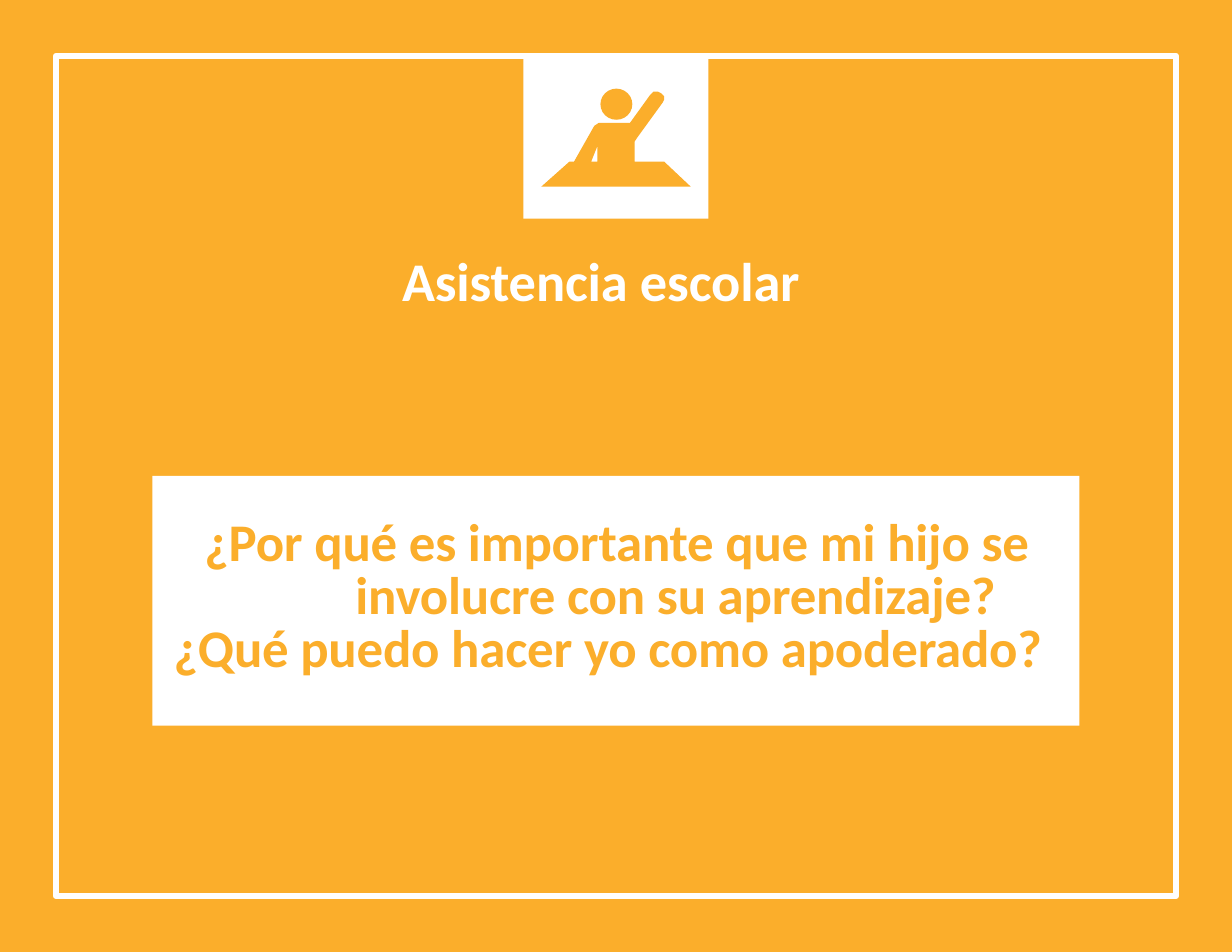
from dataclasses import dataclass
from typing import Optional

from pptx import Presentation
from pptx.dml.color import RGBColor
from pptx.enum.shapes import MSO_SHAPE
from pptx.enum.text import MSO_ANCHOR, MSO_AUTO_SIZE, PP_ALIGN
from pptx.util import Pt

COLORS = {"orange": "FBAE2B", "white": "FFFFFF"}


@dataclass
class Block:
    left: float
    top: float
    width: float
    height: float
    fill: Optional[str] = None
    line: Optional[str] = None
    kind: MSO_SHAPE = MSO_SHAPE.RECTANGLE


@dataclass
class Question:
    text: str
    align: PP_ALIGN
    margin: float
    indent: float = 0


PAGE = Block(0, 0, 792, 612, fill="orange")
FRAME = Block(36, 36, 720, 540, line="white")
PANEL = Block(98, 306, 596, 160.5, fill="white")
BADGE = Block(336.5, 36, 119, 104.5, fill="white")
HEAD = Block(386, 57, 20.5, 20, fill="orange", kind=MSO_SHAPE.OVAL)

PUPIL_AND_DESK = [
    (443.5, 119.5), (427, 104.4), (424.8, 103.7), (407.5, 103.7),
    (407.5, 91.4), (410.4, 87.8), (426.2, 66.2), (427, 64.1),
    (427, 61.9), (424.8, 59.8), (422.6, 59), (420.5, 59.4),
    (418.3, 61.2), (405.4, 79.2), (385.2, 79.2), (381.6, 80.6),
    (369.4, 103.7), (365.5, 103.7), (348.5, 119.5),
]
ELBOW_GAP = [(380.2, 103.7), (384.5, 94.3), (384.5, 103.7)]

QUESTIONS = [
    Question("¿Por qué es importante que mi hijo se involucre con su aprendizaje?",
             PP_ALIGN.CENTER, 85, -75.6),
    Question("¿Qué puedo hacer yo como apoderado?", PP_ALIGN.LEFT, 13.7),
]


def rgb(name: str) -> RGBColor:
    return RGBColor.from_string(COLORS[name])


def paint(sp, fill: Optional[str], line: Optional[str] = None) -> None:
    sp.shadow.inherit = False
    if fill:
        sp.fill.solid()
        sp.fill.fore_color.rgb = rgb(fill)
    else:
        sp.fill.background()
    if line:
        sp.line.color.rgb = rgb(line)
        sp.line.width = Pt(4)
    else:
        sp.line.fill.background()


def add_block(shapes, b: Block):
    sp = shapes.add_shape(b.kind, Pt(b.left), Pt(b.top), Pt(b.width), Pt(b.height))
    paint(sp, b.fill, b.line)
    return sp


def add_pupil(shapes) -> None:
    builder = shapes.build_freeform(*PUPIL_AND_DESK[0], scale=Pt(1))
    builder.add_line_segments(PUPIL_AND_DESK[1:])
    builder.move_to(*ELBOW_GAP[0])
    builder.add_line_segments(ELBOW_GAP[1:])
    paint(builder.convert_to_shape(), "orange")


def set_frame(tf, top: float, right: float = 0, bottom: float = 0) -> None:
    tf.word_wrap = True
    tf.auto_size = MSO_AUTO_SIZE.NONE
    tf.vertical_anchor = MSO_ANCHOR.TOP
    tf.margin_left, tf.margin_top = Pt(0), Pt(top)
    tf.margin_right, tf.margin_bottom = Pt(right), Pt(bottom)


def write(p, text: str, size: float, color: str, align: PP_ALIGN) -> None:
    p.text = text
    p.alignment = align
    for r in p.runs:
        r.font.name = "Calibri"
        r.font.size = Pt(size)
        r.font.bold = True
        r.font.color.rgb = rgb(color)
        r.font._element.set("spc", "-10")


def place_title(shapes) -> None:
    sp = shapes.title
    sp.left, sp.top, sp.width, sp.height = Pt(258.5), Pt(157.7), Pt(275), Pt(44)
    set_frame(sp.text_frame, 1)
    write(sp.text_frame.paragraphs[0], "Asistencia escolar", 35, "white", PP_ALIGN.LEFT)
    shapes.element.append(sp.element)


def add_questions(shapes) -> None:
    tf = add_block(shapes, PANEL).text_frame
    set_frame(tf, 28, 8.5, 28)
    for i, q in enumerate(QUESTIONS):
        p = tf.add_paragraph() if i else tf.paragraphs[0]
        write(p, q.text, 34, "orange", q.align)
        p.line_spacing = Pt(34)
        pPr = p._p.get_or_add_pPr()
        pPr.set("marL", str(Pt(q.margin)))
        pPr.set("indent", str(Pt(q.indent)))


def main() -> None:
    prs = Presentation()
    prs.slide_width, prs.slide_height = Pt(PAGE.width), Pt(PAGE.height)
    s = prs.slides.add_slide(prs.slide_layouts[5])
    add_block(s.shapes, PAGE)
    add_block(s.shapes, FRAME)
    place_title(s.shapes)
    add_questions(s.shapes)
    add_block(s.shapes, BADGE)
    add_block(s.shapes, HEAD)
    add_pupil(s.shapes)
    prs.save("out.pptx")


if __name__ == "__main__":
    main()
